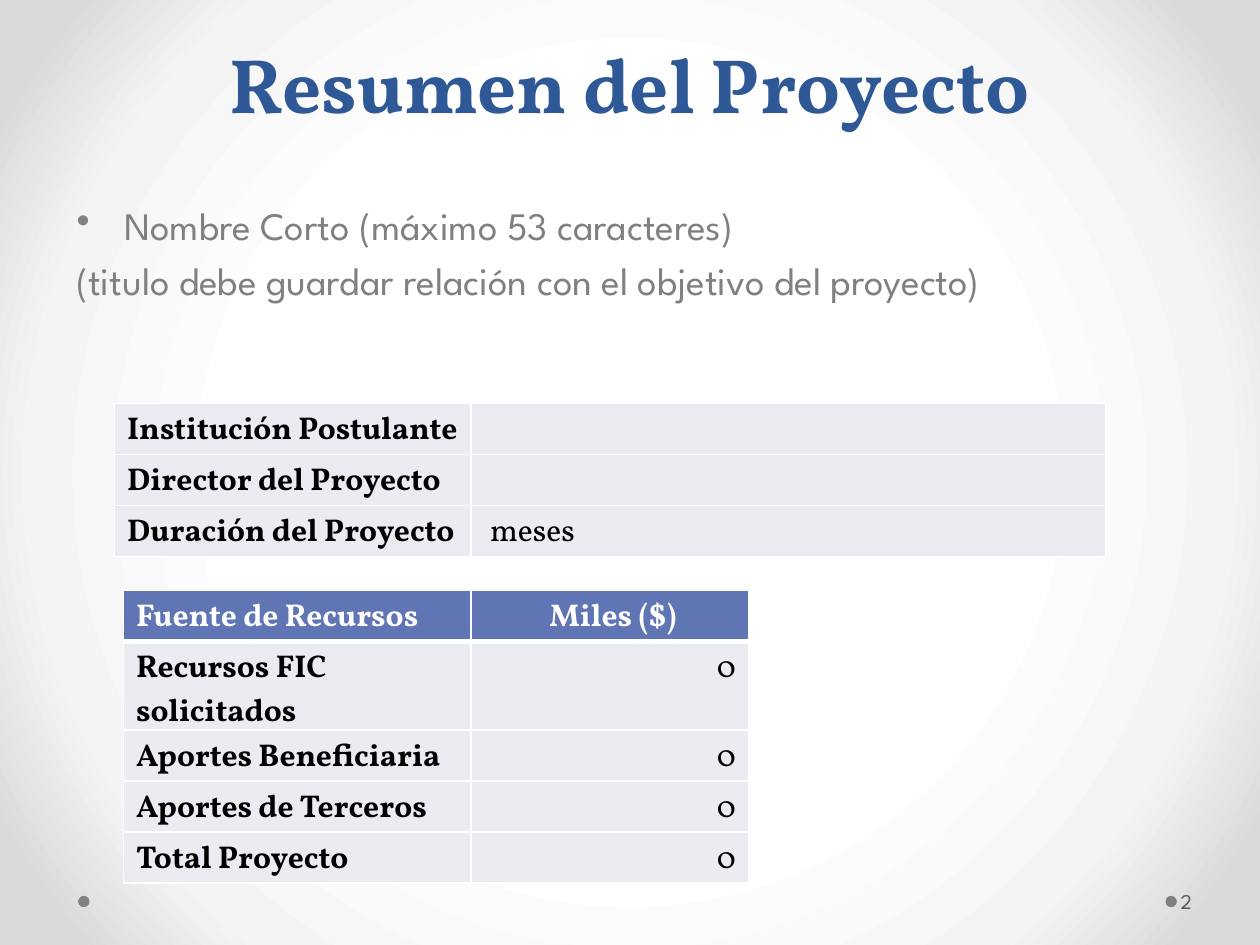
from pptx import Presentation, util as u
from pptx.dml.color import RGBColor
from pptx.enum import shapes, text
from pptx.oxml import parse_xml
from pptx.oxml.ns import nsdecls, qn

WIDTH, HEIGHT = 10, 7.5
SERIF, SANS = "Vollkorn", "League Spartan"
COLORS = {
    "title": "2F5897", "grey": "808080", "number": "595959", "header": "6076B4",
    "cell": "EAECF2", "white": "FFFFFF", "black": "000000",
}
BACKGROUND_STOPS = [(50, "FFFFFF"), (76, "F4F4F4"), (92, "DADADA")]
LEFT, CENTER, RIGHT = text.PP_ALIGN.LEFT, text.PP_ALIGN.CENTER, text.PP_ALIGN.RIGHT

PROJECT_ROWS = [
    ("Institución Postulante", ""),
    ("Director del Proyecto", ""),
    ("Duración del Proyecto", " meses"),
]
FUNDING_ROWS = [
    ("Fuente de Recursos", " Miles ($)"),
    ("Recursos FIC solicitados", "0"),
    ("Aportes Beneficiaria", "0"),
    ("Aportes de Terceros", "0"),
    ("Total Proyecto", "0"),
]


def box(left, top, width, height):
    return (u.Inches(WIDTH * left), u.Inches(HEIGHT * top),
            u.Inches(WIDTH * width), u.Inches(HEIGHT * height))


def add_run(paragraph, words, size, font, color, bold=False):
    run = paragraph.add_run()
    run.text = words
    run.font.size = u.Pt(size)
    run.font.name = font
    run.font.bold = bold
    run.font.color.rgb = RGBColor.from_string(COLORS[color])


def paint_background(slide):
    slide.background.fill.solid()
    properties = slide.element.find(".//" + qn("p:bgPr"))
    stops = "".join(
        f'<a:gs pos="{share * 1000}"><a:srgbClr val="{color}"/></a:gs>'
        for share, color in BACKGROUND_STOPS)
    gradient = parse_xml(
        f'<a:gradFill {nsdecls("a")} rotWithShape="1"><a:gsLst>{stops}</a:gsLst>'
        '<a:path path="circle"><a:fillToRect l="50000" t="50000" r="50000" b="50000"/>'
        '</a:path></a:gradFill>')
    properties.replace(properties[0], gradient)


def add_dot(slide, left):
    dot = slide.shapes.add_shape(
        shapes.MSO_SHAPE.OVAL, *box(left, 0.948, 0.009, 0.012))
    dot.shadow.inherit = False
    dot.fill.solid()
    dot.fill.fore_color.rgb = RGBColor.from_string(COLORS["grey"])
    dot.line.fill.background()


def fill_title(slide, words):
    title = slide.shapes.title
    title.left, title.top, title.width, title.height = box(0.05, 0, 0.9, 0.143)
    frame = title.text_frame
    frame.auto_size = text.MSO_AUTO_SIZE.NONE
    frame.vertical_anchor = text.MSO_ANCHOR.BOTTOM
    paragraph = frame.paragraphs[0]
    paragraph.alignment = CENTER
    paragraph.line_spacing = u.Pt(58)
    add_run(paragraph, words, 44, SERIF, "title", True)


def add_text(slide, place, lines, size, color):
    frame = slide.shapes.add_textbox(*place).text_frame
    frame.word_wrap = True
    for index, words in enumerate(lines):
        paragraph = frame.add_paragraph() if index else frame.paragraphs[0]
        paragraph.space_before = u.Pt(size * 0.2)
        add_run(paragraph, words, size, SANS, color)
    return frame


def add_bullet(paragraph, indent):
    properties = paragraph._p.get_or_add_pPr()
    properties.set("marL", str(u.Inches(indent)))
    properties.set("indent", str(-u.Inches(indent)))
    properties.append(parse_xml(f'<a:buChar {nsdecls("a")} char="•"/>'))


def add_borders(cell, bottom):
    properties = cell._tc.get_or_add_tcPr()
    widths = {"lnL": 1, "lnR": 1, "lnT": 1, "lnB": bottom}
    for index, (side, width) in enumerate(widths.items()):
        properties.insert(index, parse_xml(
            f'<a:{side} {nsdecls("a")} w="{u.Pt(width)}"><a:solidFill>'
            f'<a:srgbClr val="{COLORS["white"]}"/></a:solidFill></a:{side}>'))


def add_grid(slide, left, top, columns, rows, value_alignment, has_header=False):
    place = box(left, top, sum(columns), 0.054 * len(rows))
    table = slide.shapes.add_table(len(rows), len(columns), *place).table
    table.first_row = has_header
    table.horz_banding = False
    for column, share in zip(table.columns, columns):
        column.width = u.Inches(WIDTH * share)
    for row, entries in enumerate(rows):
        header = has_header and row == 0
        for column, words in enumerate(entries):
            cell = table.cell(row, column)
            cell.fill.solid()
            cell.fill.fore_color.rgb = RGBColor.from_string(
                COLORS["header" if header else "cell"])
            add_borders(cell, 3 if header else 1)
            paragraph = cell.text_frame.paragraphs[0]
            if column:
                paragraph.alignment = CENTER if header else value_alignment
            if words:
                add_run(paragraph, words, 18, SERIF,
                        "white" if header else "black", header or column == 0)


def main():
    presentation = Presentation()
    presentation.slide_width = u.Inches(WIDTH)
    presentation.slide_height = u.Inches(HEIGHT)
    slide = presentation.slides.add_slide(presentation.slide_layouts[5])
    paint_background(slide)
    for left in (0.925, 0.062):
        add_dot(slide, left)
    fill_title(slide, "Resumen del Proyecto")
    summary = add_text(
        slide, box(0.051, 0.207, 0.9, 0.11),
        ["Nombre Corto (máximo 53 caracteres)",
         "(titulo debe guardar relación con el objetivo del proyecto)"],
        22.2, "grey")
    add_bullet(summary.paragraphs[0], 0.38)
    number = add_text(slide, box(0.934, 0.927, 0.061, 0.053), ["2"], 12, "number")
    number.margin_left = u.Inches(0.03)
    number.margin_right = u.Inches(0.05)
    number.vertical_anchor = text.MSO_ANCHOR.MIDDLE
    number.paragraphs[0].space_before = u.Pt(0)
    add_grid(slide, 0.098, 0.625, (0.276, 0.22), FUNDING_ROWS, RIGHT, True)
    add_grid(slide, 0.091, 0.427, (0.283, 0.504), PROJECT_ROWS, LEFT)
    presentation.save("out.pptx")


if __name__ == "__main__":
    main()
